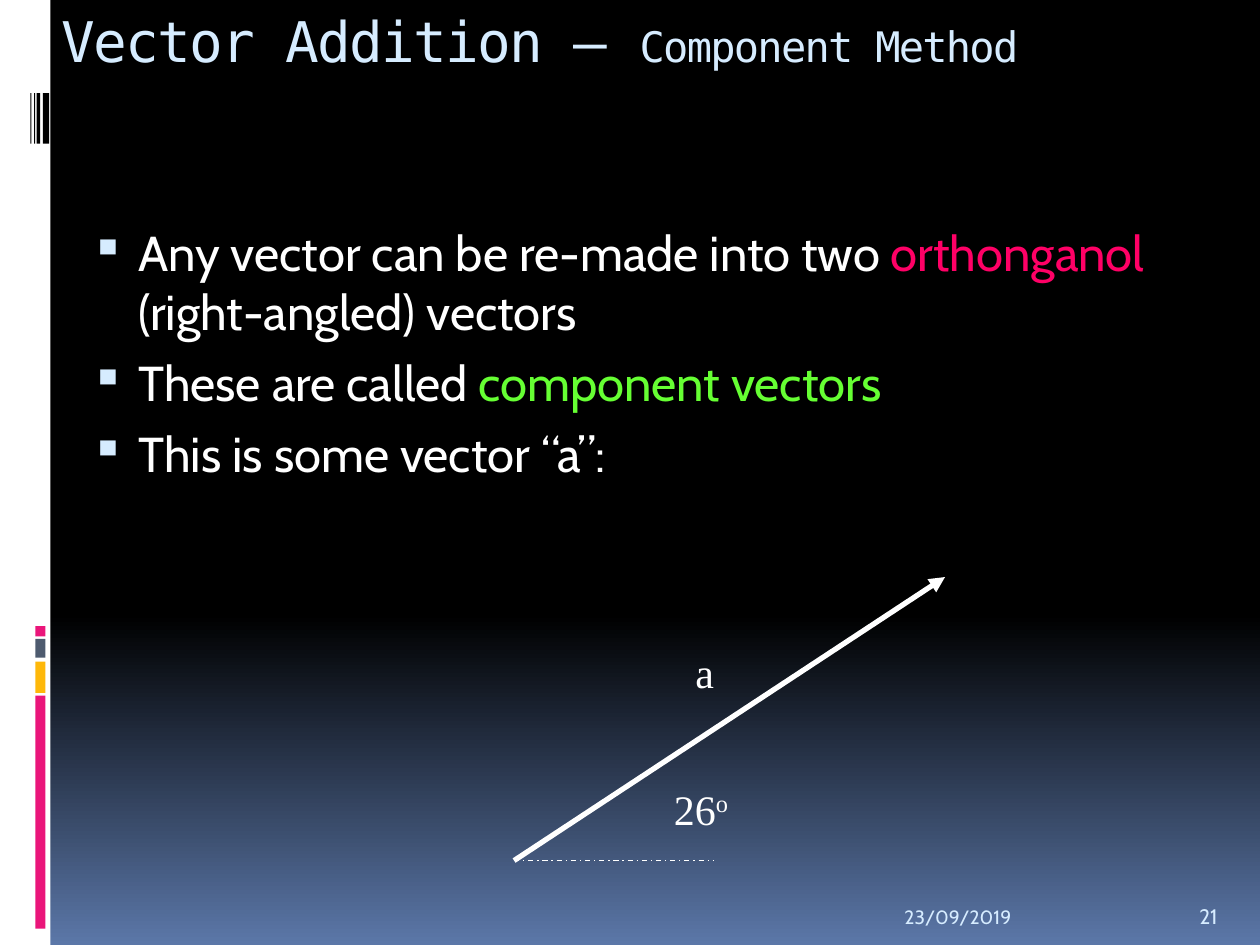
from lxml.etree import SubElement
from pptx import Presentation
from pptx.dml.color import RGBColor
from pptx.enum.dml import MSO_LINE_DASH_STYLE as Dash
from pptx.enum.shapes import MSO_CONNECTOR as Connector, MSO_SHAPE as Shape
from pptx.enum.text import MSO_ANCHOR as Anchor
from pptx.oxml.ns import qn
from pptx.util import Inches, Pt

WHITE, BLACK, PALE, PINK = "FFFFFF", "000000", "D6ECFF", "EA157A"
MONO, SANS, SERIF = "DejaVu Sans Mono", "Cabin", "Times New Roman"


def color(code):
    """Turn a hex string into a colour."""
    return RGBColor.from_string(code)


def paint_background(slide):
    """Fade the background from black to blue in the lower third."""
    fill = slide.background.fill
    fill.gradient()
    fill.gradient_angle = 270
    for stop, (position, code) in zip(fill.gradient_stops, [(0.65, BLACK), (1, "5B77A8")]):
        stop.position = position
        stop.color.rgb = color(code)


def add_bar(slide, left, top, width, height, code):
    """Add a plain filled rectangle."""
    bar = slide.shapes.add_shape(
        Shape.RECTANGLE, Inches(left), Inches(top), Inches(width), Inches(height))
    bar.shadow.inherit = False
    bar.fill.solid()
    bar.fill.fore_color.rgb = color(code)
    bar.line.fill.background()


def add_run(paragraph, words, size, font, code):
    """Append a formatted run and return it."""
    run = paragraph.add_run()
    run.text = words
    run.font.size = Pt(size)
    run.font.name = font
    run.font.color.rgb = color(code)
    return run


def add_text(slide, left, top, width, height, anchor=Anchor.TOP):
    """Add an empty wrapping text box and return its frame."""
    frame = slide.shapes.add_textbox(
        Inches(left), Inches(top), Inches(width), Inches(height)).text_frame
    frame.word_wrap = True
    frame.vertical_anchor = anchor
    return frame


def add_label(slide, box, words, size, font, code, anchor=Anchor.TOP):
    """Add a one-line label and return its paragraph."""
    paragraph = add_text(slide, *box, anchor).paragraphs[0]
    add_run(paragraph, words, size, font, code)
    return paragraph


def set_bullet(paragraph):
    """Give a paragraph a pale square bullet with a hanging indent."""
    paragraph.space_before = Pt(7)
    props = paragraph._p.get_or_add_pPr()
    props.set("marL", str(Inches(0.45)))
    props.set("indent", str(Inches(-0.38)))
    SubElement(SubElement(props, qn("a:buClr")), qn("a:srgbClr"), val=PALE)
    SubElement(props, qn("a:buSzPct"), val="95000")
    SubElement(props, qn("a:buChar"), char="▪")


def add_line(slide, start, end, width, dash=None, arrow=False):
    """Add a white line, optionally dashed or with an arrowhead."""
    line = slide.shapes.add_connector(
        Connector.STRAIGHT, *(Inches(value) for value in (*start, *end)))
    line.line.color.rgb = color(WHITE)
    line.line.width = Pt(width)
    if dash:
        line.line.dash_style = dash
    if arrow:
        SubElement(line.line._get_or_add_ln(), qn("a:tailEnd"), type="triangle")
    SubElement(line._element.spPr, qn("a:effectLst"))


def add_side_strip(slide):
    """Add the white margin with its coloured blocks and black stripes."""
    add_bar(slide, 0, 0, 0.4, 7.5, WHITE)
    for top, height, code in [(5.52, 1.85, PINK), (5.25, 0.25, "FEB80A"),
                              (5.07, 0.15, "4E5B6F"), (4.97, 0.08, PINK)]:
        add_bar(slide, 0.28, top, 0.08, height, code)
    for left, width in [(0.34, 0.05), (0.29, 0.03), (0.27, 0.01), (0.24, 0.01)]:
        add_bar(slide, left, 0.74, width, 0.4, BLACK)


def add_title(slide):
    """Add the two-size title with tightened letters."""
    title = add_label(slide, (0.39, 0, 9.61, 1), "Vector Addition – ", 32, MONO, PALE)
    add_run(title, "Component Method", 24, MONO, PALE)
    for run in title.runs:
        run.font._element.set("spc", "-100")


def add_points(slide):
    """Add the bulleted points with their highlighted terms."""
    points = [
        [("Any vector can be re-made into two ", WHITE), ("orthonganol", "FF0066"),
         (" (right-angled) vectors", WHITE)],
        [("These are called ", WHITE), ("component vectors", "66FF33")],
        [("This is some vector “a”:", WHITE)],
    ]
    frame = add_text(slide, 0.55, 1.72, 9.69, 2.34)
    for index, point in enumerate(points):
        paragraph = frame.add_paragraph() if index else frame.paragraphs[0]
        set_bullet(paragraph)
        for words, code in point:
            add_run(paragraph, words, 28, SANS, code)


def add_vector(slide):
    """Draw vector a, its horizontal reference and the angle between them."""
    origin = (4.08, 6.83)
    add_line(slide, origin, (7.5, 4.58), 3, arrow=True)
    add_label(slide, (5.42, 5.08, 0.5, 0.5), "a", 24, SERIF, WHITE)
    add_line(slide, origin, (5.67, 6.83), 0.75, dash=Dash.DASH_DOT)
    angle = add_label(slide, (5.25, 6.17, 0.92, 0.5), "26", 24, SERIF, WHITE)
    degree = add_run(angle, "o", 24, SERIF, WHITE)
    degree.font._element.set("baseline", "30000")


def main():
    """Build the slide and save it."""
    deck = Presentation()
    deck.slide_width, deck.slide_height = Inches(10), Inches(7.5)
    slide = deck.slides.add_slide(deck.slide_layouts[6])
    paint_background(slide)
    add_side_strip(slide)
    add_title(slide)
    add_points(slide)
    add_label(slide, (7.08, 7.02, 2.33, 0.4), "23/09/2019", 11, SANS, PALE, Anchor.BOTTOM)
    add_label(slide, (9.42, 7.02, 0.5, 0.4), "21", 12, SANS, PALE, Anchor.BOTTOM)
    add_vector(slide)
    deck.save("out.pptx")


if __name__ == "__main__":
    main()
